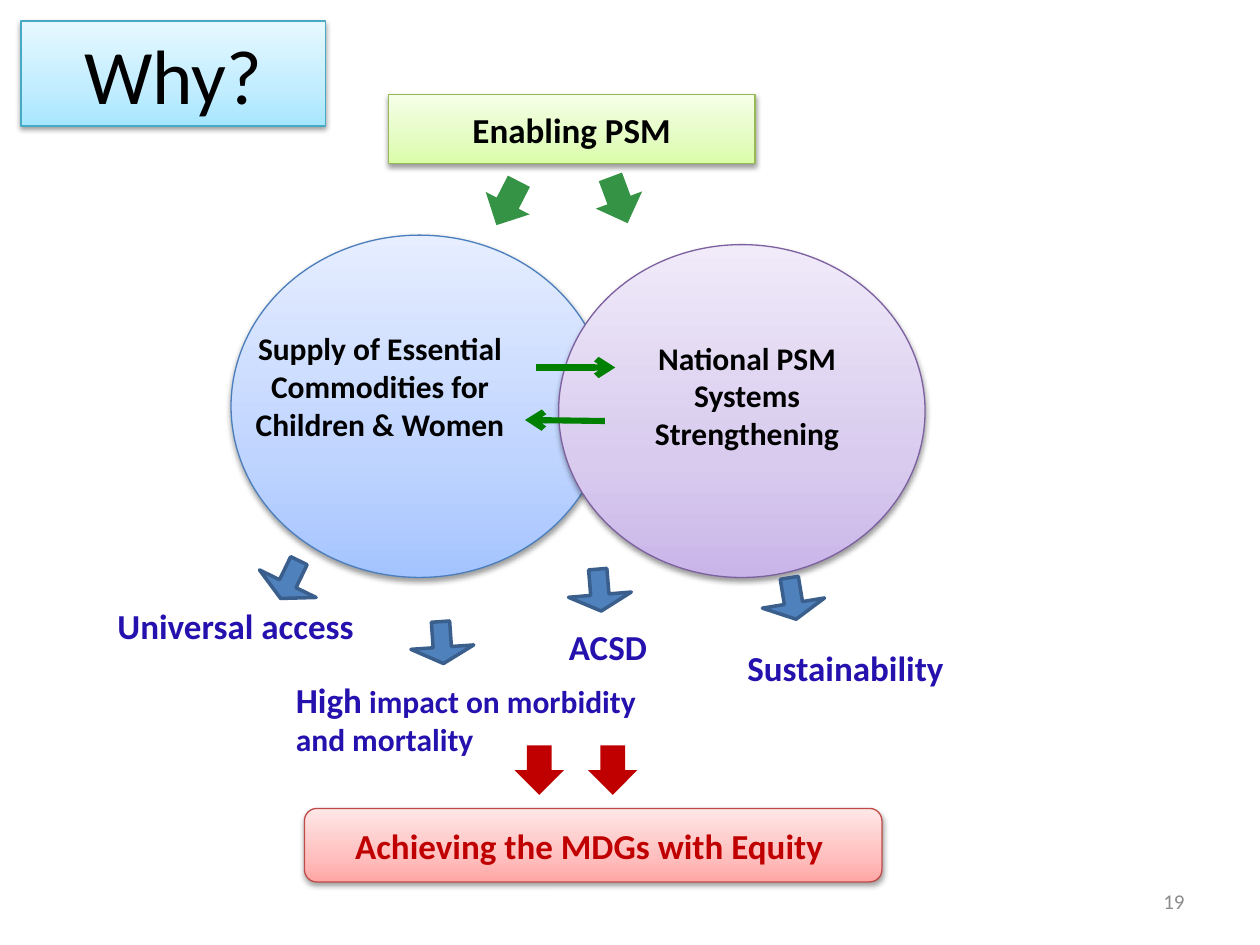
from typing import NamedTuple

import lxml.etree
import pptx
import pptx.dml.color
import pptx.enum.dml
import pptx.enum.shapes
import pptx.enum.text
import pptx.oxml.ns
import pptx.util
import copy

RGB = pptx.dml.color.RGBColor
SHAPE = pptx.enum.shapes.MSO_SHAPE
ALIGN = pptx.enum.text.PP_ALIGN
ANCHOR = pptx.enum.text.MSO_ANCHOR
qn = pptx.oxml.ns.qn

COLUMNS, ROWS = 120, 90
FONT = "Calibri"
BLACK = RGB(0x00, 0x00, 0x00)
INDIGO = RGB(0x25, 0x12, 0xAE)
RED = RGB(0xC0, 0x00, 0x00)
GREY = RGB(0x8C, 0x8C, 0x8C)
ENABLING_GREEN = RGB(0x35, 0x93, 0x45)
EXCHANGE_GREEN = RGB(0x00, 0x80, 0x00)
OUTCOME_BLUE = RGB(0x4F, 0x81, 0xBD)
OUTCOME_EDGE = RGB(0x3A, 0x5F, 0x8C)


class Area(NamedTuple):
    column: float
    row: float
    columns: float
    rows: float


class Theme(NamedTuple):
    bottom: RGB
    middle: RGB
    top: RGB
    edge: RGB


class Words(NamedTuple):
    text: str
    size: float = 20
    color: RGB = BLACK
    bold: bool = True


class Panel(NamedTuple):
    kind: SHAPE
    area: Area
    theme: Theme
    words: tuple = ()


class Label(NamedTuple):
    area: Area
    words: tuple
    align: ALIGN = ALIGN.LEFT
    anchor: ANCHOR = ANCHOR.TOP
    wrap: bool = True


class Pointer(NamedTuple):
    kind: SHAPE
    area: Area
    rotation: float
    color: RGB
    edge: RGB | None = None
    adjustments: tuple = ()


CYAN = Theme(RGB(0xA7, 0xE6, 0xFF), RGB(0xC1, 0xED, 0xFF), RGB(0xE7, 0xF8, 0xFF), RGB(0x46, 0xAA, 0xC5))
BLUE = Theme(RGB(0xA4, 0xC4, 0xFF), RGB(0xBF, 0xD4, 0xFF), RGB(0xE6, 0xEE, 0xFF), RGB(0x4B, 0x7E, 0xBC))
PURPLE = Theme(RGB(0xC9, 0xB5, 0xE8), RGB(0xD8, 0xCB, 0xEE), RGB(0xF0, 0xEA, 0xF9), RGB(0x7D, 0x60, 0xA0))
LIME = Theme(RGB(0xDA, 0xFD, 0xA7), RGB(0xE4, 0xFC, 0xC2), RGB(0xF5, 0xFF, 0xE7), RGB(0x98, 0xB9, 0x55))
ROSE = Theme(RGB(0xFF, 0xA6, 0xA5), RGB(0xFF, 0xC0, 0xBF), RGB(0xFF, 0xE7, 0xE7), RGB(0xBF, 0x4C, 0x48))

PANELS = (
    Panel(SHAPE.OVAL, Area(22, 22.4, 35.9, 32.6), BLUE),
    Panel(SHAPE.OVAL, Area(53.2, 23.3, 34.9, 31.7), PURPLE),
    Panel(SHAPE.RECTANGLE, Area(37, 9, 34.9, 6.6), LIME, (Words("Enabling PSM"),)),
    Panel(SHAPE.ROUNDED_RECTANGLE, Area(29, 77, 55, 7), ROSE,
          (Words("Achieving the MDGs with Equity ", color=RED),)),
)
LABELS = (
    Label(Area(23, 32, 26.4, 9.5),
          (Words("Supply of Essential Commodities for Children & Women", 18),), ALIGN.CENTER, ANCHOR.MIDDLE),
    Label(Area(57, 32, 28.3, 11.3),
          (Words("National PSM Systems Strengthening", 18),), ALIGN.CENTER, ANCHOR.MIDDLE),
    Label(Area(10, 57, 25.1, 5.3), (Words("Universal access", color=INDIGO),), wrap=False),
    Label(Area(27, 64, 35, 8.9),
          (Words("High", color=INDIGO), Words(" ", 18, bold=False),
           Words("impact on morbidity and mortality", 18, INDIGO))),
    Label(Area(70, 61, 21.2, 5.3), (Words("Sustainability", color=INDIGO),), wrap=False),
    Label(Area(53, 59, 10, 5.3), (Words("ACSD", color=INDIGO),), wrap=False),
    Label(Area(86, 83.4, 28, 4.8), (Words("19", 12, GREY, False),), ALIGN.RIGHT, ANCHOR.MIDDLE),
)
ENABLING_ARROWS = ((46, 17, 117.1), (56.6, 16.7, 69.6))
OUTCOME_ARROWS = ((24.6, 53.2, 25.9), (72.5, 55, -9.3), (54.1, 54.2, -4.8), (39.1, 59.2, -4))
GOAL_ARROWS = ((49, 71, 90), (56, 71, 90))
POINTERS = (
    *(Pointer(SHAPE.RIGHT_ARROW, Area(column, row, 4.7, 4.7), turn, color)
      for color, places in ((ENABLING_GREEN, ENABLING_ARROWS), (RED, GOAL_ARROWS))
      for column, row, turn in places),
    *(Pointer(SHAPE.DOWN_ARROW, Area(column, row, 6, 4), turn, OUTCOME_BLUE, OUTCOME_EDGE, (0.29, 0.39))
      for column, row, turn in OUTCOME_ARROWS),
)
EXCHANGES = (((51, 35), (58.6, 35)), ((57.6, 40.1), (50, 40)))

deck = pptx.Presentation()
deck.slide_width = pptx.util.Inches(10)
deck.slide_height = pptx.util.Inches(7.5)
slide = deck.slides.add_slide(deck.slide_layouts[5])


def across(columns: float) -> int:
    return round(deck.slide_width * columns / COLUMNS)


def down(rows: float) -> int:
    return round(deck.slide_height * rows / ROWS)


def box(area: Area) -> tuple[int, int, int, int]:
    return across(area.column), down(area.row), across(area.columns), down(area.rows)


def write(frame, words: tuple, align: ALIGN, anchor: ANCHOR, wrap: bool = True) -> None:
    frame.auto_size = pptx.enum.text.MSO_AUTO_SIZE.NONE
    frame.word_wrap = wrap
    frame.vertical_anchor = anchor
    paragraph = frame.paragraphs[0]
    paragraph.alignment = align
    for part in words:
        run = paragraph.add_run()
        run.text = part.text
        run.font.name = FONT
        run.font.size = pptx.util.Pt(part.size)
        run.font.bold = part.bold
        run.font.color.rgb = part.color


def apply_theme(shape, theme: Theme) -> None:
    shape.fill.gradient()
    shape.fill.gradient_angle = 90
    first = shape._element.spPr.find(".//" + qn("a:gs"))
    first.addnext(copy.deepcopy(first))
    colors = (theme.bottom, theme.middle, theme.top)
    for stop, position, color in zip(shape.fill.gradient_stops, (0, 0.35, 1), colors):
        stop.position = position
        stop.color.rgb = color
    shape.line.color.rgb = theme.edge
    shape.line.width = pptx.util.Pt(0.75)
    shape.shadow.inherit = False
    effects = shape._element.spPr.find(qn("a:effectLst"))
    shadow = lxml.etree.SubElement(effects, qn("a:outerShdw"), blurRad="40000", dist="20000",
                                   dir="5400000", rotWithShape="0")
    black = lxml.etree.SubElement(shadow, qn("a:srgbClr"), val=str(BLACK))
    lxml.etree.SubElement(black, qn("a:alpha"), val="38000")


def draw_panel(panel: Panel) -> None:
    shape = slide.shapes.add_shape(panel.kind, *box(panel.area))
    apply_theme(shape, panel.theme)
    write(shape.text_frame, panel.words, ALIGN.CENTER, ANCHOR.MIDDLE)


def draw_label(label: Label) -> None:
    frame = slide.shapes.add_textbox(*box(label.area)).text_frame
    write(frame, label.words, label.align, label.anchor, label.wrap)


def draw_pointer(pointer: Pointer) -> None:
    arrow = slide.shapes.add_shape(pointer.kind, *box(pointer.area))
    arrow.rotation = pointer.rotation
    arrow.shadow.inherit = False
    arrow.fill.solid()
    arrow.fill.fore_color.rgb = pointer.color
    for index, value in enumerate(pointer.adjustments):
        arrow.adjustments[index] = value
    if pointer.edge is None:
        arrow.line.fill.background()
    else:
        arrow.line.color.rgb = pointer.edge
        arrow.line.width = pptx.util.Pt(2)


def draw_exchange(start: tuple[float, float], end: tuple[float, float]) -> None:
    exchange = slide.shapes.add_connector(
        pptx.enum.shapes.MSO_CONNECTOR.STRAIGHT,
        across(start[0]), down(start[1]), across(end[0]), down(end[1]))
    exchange.line.color.rgb = EXCHANGE_GREEN
    exchange.line.width = pptx.util.Pt(3.5)
    lxml.etree.SubElement(exchange.line._get_or_add_ln(), qn("a:tailEnd"), type="arrow")
    lxml.etree.SubElement(exchange._element.spPr, qn("a:effectLst"))


def draw_title() -> None:
    title = slide.shapes.title
    title.left, title.top, title.width, title.height = box(Area(2, 2, 29, 10))
    apply_theme(title, CYAN)
    write(title.text_frame, (Words("Why?", 44, bold=False),), ALIGN.CENTER, ANCHOR.MIDDLE)


def main() -> None:
    draw_title()
    for panel in PANELS:
        draw_panel(panel)
    for pointer in POINTERS:
        draw_pointer(pointer)
    for label in LABELS:
        draw_label(label)
    for start, end in EXCHANGES:
        draw_exchange(start, end)
    deck.save("out.pptx")


if __name__ == "__main__":
    main()
